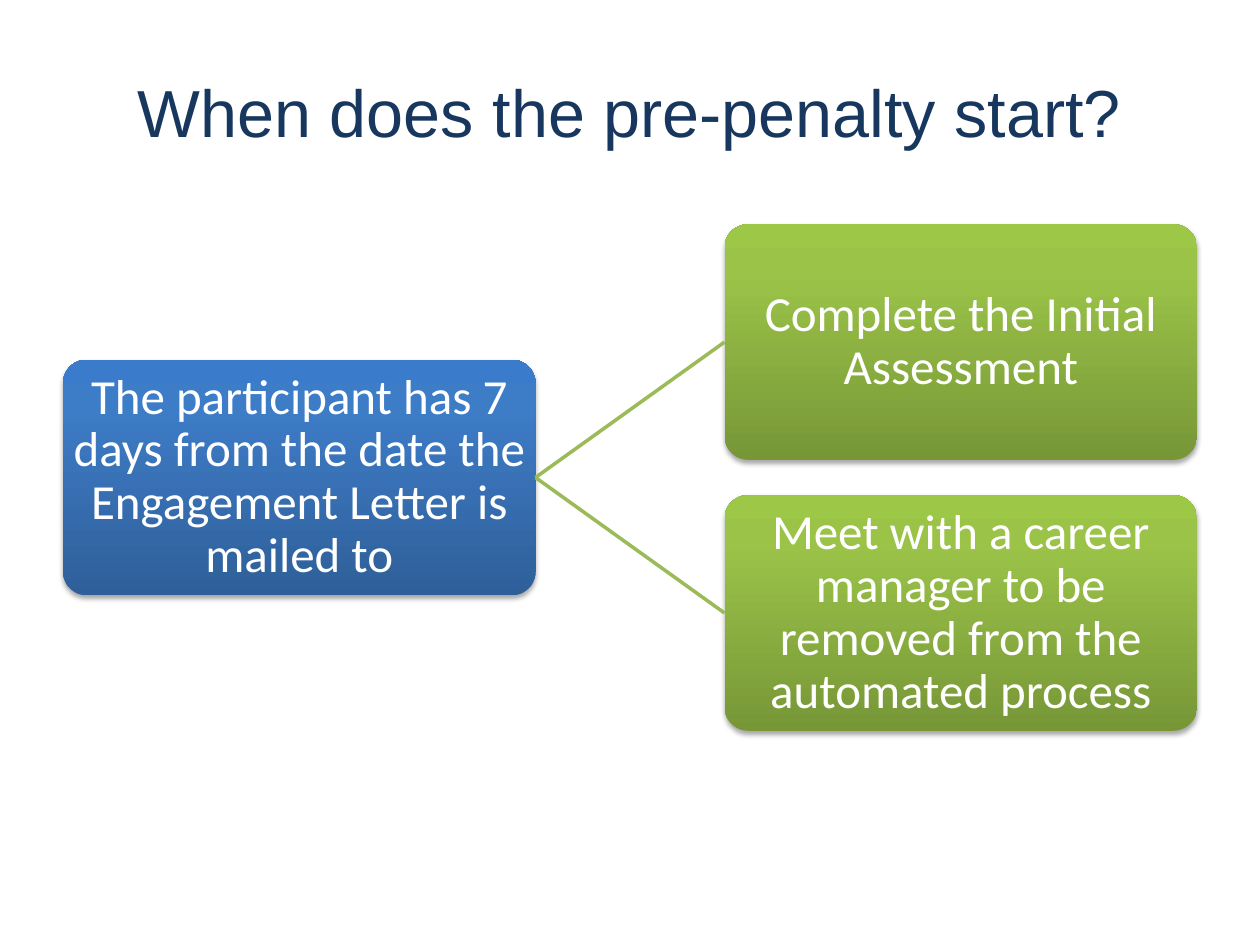
from copy import deepcopy
from dataclasses import dataclass

from lxml import etree
from pptx import Presentation
from pptx.dml.color import RGBColor
from pptx.enum import shapes, text
from pptx.oxml import ns
from pptx.util import Inches, Pt


@dataclass(frozen=True)
class Theme:
    title_color: str = "17375E"
    text_color: str = "FFFFFF"
    line_color: str = "9BBB59"
    # Gradient colours run from the bottom of a card to its top
    blue: tuple = ("2F5F99", "3D7CC7", "3A7CCB")
    green: tuple = ("779737", "9BC348", "9DC746")
    stops: tuple = (0, 0.8, 1)
    title_font: str = "Arial"
    body_font: str = "Calibri"
    title_size: int = 38
    body_size: int = 28
    line_width: int = 2


THEME = Theme()
CARD_W, CARD_H = 3.75, 1.87
CARD_GAP = 0.28
OUTCOMES = (
    "Complete the Initial Assessment",
    "Meet with a career manager to be removed from the automated process",
)


def add_run(p, words, font, size, color):
    r = p.add_run()
    r.text = words
    r.font.name = font
    r.font.size = Pt(size)
    r.font.color.rgb = RGBColor.from_string(color)


def fill_gradient(sp, colors):
    sp.fill.gradient()
    sp.fill.gradient_angle = 90
    stop_list = sp.element.spPr.find(".//" + ns.qn("a:gsLst"))
    stop_list.append(deepcopy(stop_list[-1]))
    for stop, position, color in zip(sp.fill.gradient_stops, THEME.stops, colors):
        stop.position = position
        stop.color.rgb = RGBColor.from_string(color)


def add_soft_shadow(sp):
    sp.shadow.inherit = False
    effects = sp.element.spPr.find(ns.qn("a:effectLst"))
    shadow = etree.SubElement(
        effects, ns.qn("a:outerShdw"), blurRad=str(Pt(3.1)), dist=str(Pt(1.8)),
        dir="5400000", rotWithShape="0")
    color = etree.SubElement(shadow, ns.qn("a:srgbClr"), val="000000")
    etree.SubElement(color, ns.qn("a:alpha"), val="35000")


def add_title(s, words, left, top, width, height):
    title = s.shapes.title
    title.left, title.top = Inches(left), Inches(top)
    title.width, title.height = Inches(width), Inches(height)
    tf = title.text_frame
    tf.vertical_anchor = text.MSO_ANCHOR.MIDDLE
    p = tf.paragraphs[0]
    p.alignment = text.PP_ALIGN.CENTER
    add_run(p, words, THEME.title_font, THEME.title_size, THEME.title_color)


def add_card(s, words, colors, left, top):
    sp = s.shapes.add_shape(
        shapes.MSO_SHAPE.ROUNDED_RECTANGLE,
        Inches(left), Inches(top), Inches(CARD_W), Inches(CARD_H))
    sp.adjustments[0] = 0.1
    fill_gradient(sp, colors)
    sp.line.fill.background()
    add_soft_shadow(sp)
    tf = sp.text_frame
    tf.word_wrap = True
    tf.vertical_anchor = text.MSO_ANCHOR.MIDDLE
    tf.margin_left = tf.margin_right = tf.margin_top = tf.margin_bottom = 0
    p = tf.paragraphs[0]
    p.alignment = text.PP_ALIGN.CENTER
    p.line_spacing = 0.9
    add_run(p, words, THEME.body_font, THEME.body_size, THEME.text_color)
    return sp


def link_cards(s, source, target):
    """Join the right side of source to the left side of target."""
    line = s.shapes.add_connector(shapes.MSO_CONNECTOR.STRAIGHT, 0, 0, 0, 0)
    line.begin_connect(source, 3)
    line.end_connect(target, 1)
    line.line.color.rgb = RGBColor.from_string(THEME.line_color)
    line.line.width = Pt(THEME.line_width)
    etree.SubElement(line.element.spPr, ns.qn("a:effectLst"))


def add_tree(s, root_words, outcomes, left, top, width):
    """Place the root card at the left, centred beside a column of outcomes."""
    pitch = CARD_H + CARD_GAP
    root_top = top + pitch * (len(outcomes) - 1) / 2
    root = add_card(s, root_words, THEME.blue, left, root_top)
    for i, words in enumerate(outcomes):
        card = add_card(s, words, THEME.green, left + width - CARD_W, top + i * pitch)
        link_cards(s, root, card)


def main():
    prs = Presentation()
    prs.slide_width, prs.slide_height = Inches(10), Inches(7.5)
    s = prs.slides.add_slide(prs.slide_layouts[5])
    add_title(s, "When does the pre-penalty start?", 0.5, 0.42, 9, 0.92)
    add_tree(
        s, "The participant has 7 days from the date the Engagement Letter is mailed to",
        OUTCOMES, 0.5, 1.78, 9)
    prs.save("out.pptx")


if __name__ == "__main__":
    main()
